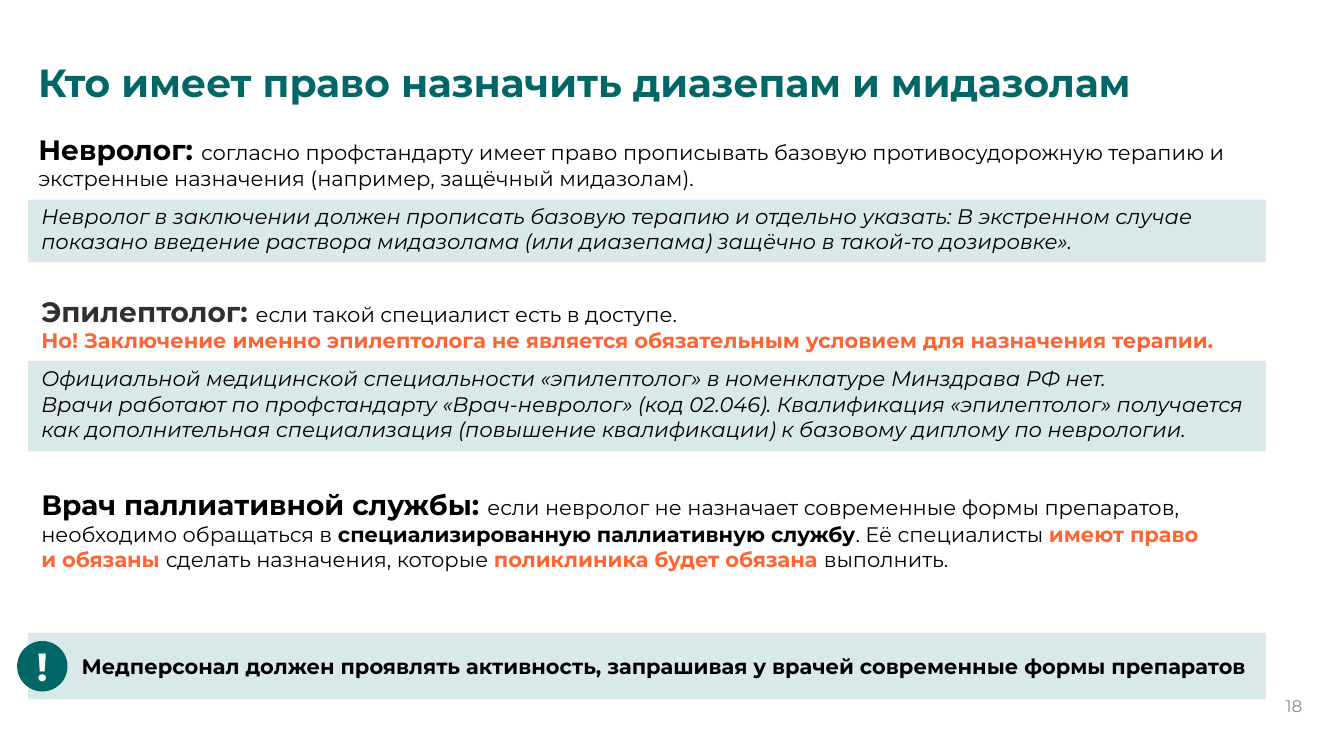
"""Build the slide on who may prescribe diazepam and midazolam."""
from lxml import etree
from pptx import Presentation
from pptx.dml.color import RGBColor
from pptx.enum import shapes, text
from pptx.oxml import ns
from pptx.util import Pt

TEAL = RGBColor(0x00, 0x67, 0x66)
BLACK = RGBColor(0x00, 0x00, 0x00)
DARK = RGBColor(0x30, 0x30, 0x30)
ORANGE = RGBColor(0xFF, 0x64, 0x33)
GREY = RGBColor(0x8C, 0x8C, 0x8C)
WHITE = RGBColor(0xFF, 0xFF, 0xFF)
FACE = "Montserrat"

deck = Presentation()
deck.slide_width, deck.slide_height = Pt(960), Pt(540)
slide = deck.slides.add_slide(deck.slide_layouts[6])


def draw(kind, left, top, width, height):
    """Add a plain teal shape."""
    form = slide.shapes.add_shape(kind, Pt(left), Pt(top), Pt(width), Pt(height))
    form.shadow.inherit = False
    form.fill.solid()
    form.fill.fore_color.rgb = TEAL
    form.line.fill.background()
    return form


def write(frame, parts, side=0, edge=8.64):
    """Fill a frame with (text, size, colour, style) parts."""
    frame.word_wrap = True
    frame.margin_left = frame.margin_right = Pt(side)
    frame.margin_top = frame.margin_bottom = Pt(edge)
    para = frame.paragraphs[0]
    for words, size, tint, style in parts:
        for row, line in enumerate(words.split("\n")):
            if row:
                para.add_line_break()
                etree.SubElement(para._p[-1], ns.qn("a:rPr"), sz=str(size * 100))
            if line:
                run = para.add_run()
                run.text = line
                run.font.name = FACE
                run.font.size = Pt(size)
                run.font.color.rgb = tint
                run.font.bold = style == "b"
                run.font.italic = style == "i"
    return para


for top, height in ((142.56, 44.64), (257.76, 64.8), (452.16, 47.52)):
    band = draw(shapes.MSO_SHAPE.RECTANGLE, 20.16, top, 884.16, height)
    tone = band.fill._xPr.find(".//" + ns.qn("a:srgbClr"))
    etree.SubElement(tone, ns.qn("a:alpha"), val="15000")

notes = [
    (27.36, 85.68, 908, 59.8, [
        ("Невролог: ", 20, BLACK, "b"),
        ("согласно профстандарту имеет право прописывать базовую противосудорожную "
         "терапию и экстренные назначения (например, защёчный мидазолам).", 15, BLACK, "")]),
    (29.52, 136.8, 908.6, 53.3, [
        ("Невролог в заключении должен прописать базовую терапию и отдельно указать: "
         "В экстренном случае\nпоказано введение раствора мидазолама (или диазепама) "
         "защёчно в такой-то дозировке».", 15, BLACK, "i")]),
    (29.52, 201.6, 920, 59.8, [
        ("Эпилептолог: ", 20, DARK, "b"),
        ("если такой специалист есть в доступе.\n", 15, BLACK, ""),
        ("Но! Заключение именно эпилептолога не является обязательным условием "
         "для назначения терапии.", 15, ORANGE, "b")]),
    (29.52, 252.72, 908, 72, [
        ("Официальной медицинской специальности «эпилептолог» в номенклатуре Минздрава РФ нет.\n"
         "Врачи работают по профстандарту «Врач-невролог» (код 02.046). "
         "Квалификация «эпилептолог» получается\nкак дополнительная специализация "
         "(повышение квалификации) к базовому диплому по неврологии.", 15, BLACK, "i")]),
    (29.52, 339.84, 920, 129.6, [
        ("Врач паллиативной службы: ", 20, BLACK, "b"),
        ("если невролог не назначает современные формы препаратов,\n"
         "необходимо обращаться в ", 15, BLACK, ""),
        ("специализированную паллиативную службу", 15, BLACK, "b"),
        (". Её специалисты ", 15, BLACK, ""),
        ("имеют право\nи обязаны ", 15, ORANGE, "b"),
        ("сделать назначения, которые ", 15, BLACK, ""),
        ("поликлиника будет обязана ", 15, ORANGE, "b"),
        ("выполнить.", 15, BLACK, "")]),
]
for left, top, width, height, parts in notes:
    box = slide.shapes.add_textbox(Pt(left), Pt(top), Pt(width), Pt(height))
    write(box.text_frame, parts).space_after = Pt(8)

title = slide.shapes.add_textbox(Pt(20.16), Pt(38.16), Pt(935.3), Pt(44.64))
head = write(title.text_frame, [
    ("Кто имеет право назначить диазепам и мидазолам", 28, TEAL, "b")], 7.2, 3.6)
head.line_spacing = 0.9
title.text_frame.vertical_anchor = text.MSO_ANCHOR.MIDDLE

call = slide.shapes.add_textbox(Pt(29.52), Pt(457.92), Pt(910.8), Pt(56.88))
write(call.text_frame, [
    ("Медперсонал должен проявлять активность, запрашивая у врачей "
     "современные формы препаратов", 15, BLACK, "b")])
call.text_frame.margin_left = Pt(28.8)

page = slide.shapes.add_textbox(Pt(887.76), Pt(482.4), Pt(42.48), Pt(28.8))
write(page.text_frame, [("18", 12, GREY, "")], 0, 0).alignment = text.PP_ALIGN.RIGHT
page.text_frame.vertical_anchor = text.MSO_ANCHOR.BOTTOM

badge = draw(shapes.MSO_SHAPE.OVAL, 12.24, 457.92, 36, 36)
mark = write(badge.text_frame, [("!", 28, WHITE, "b")], 7.2, 3.6)
mark.alignment = text.PP_ALIGN.CENTER
badge.text_frame.vertical_anchor = text.MSO_ANCHOR.MIDDLE

deck.save("out.pptx")
